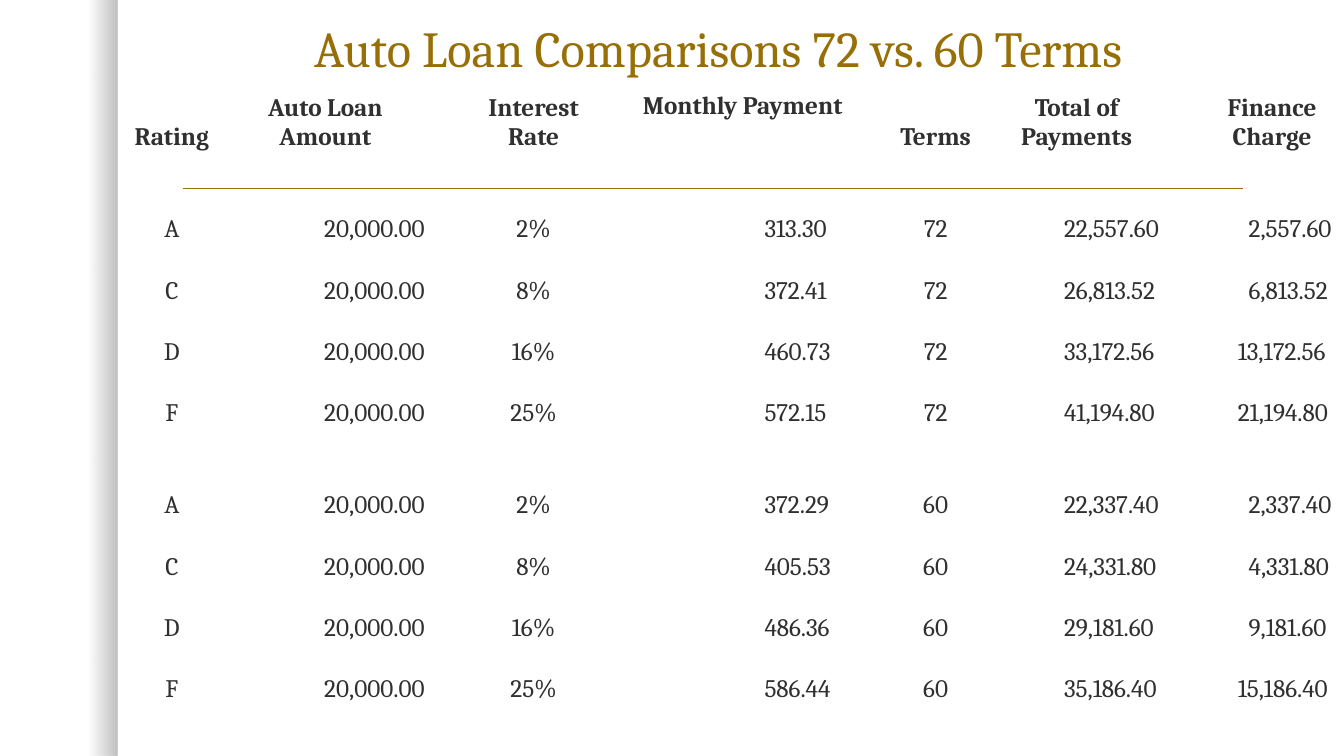
from lxml import etree
from pptx import Presentation
from pptx.dml.color import RGBColor
from pptx.enum.shapes import MSO_CONNECTOR, MSO_SHAPE
from pptx.enum.text import MSO_ANCHOR, MSO_AUTO_SIZE, PP_ALIGN
from pptx.oxml.ns import qn
from pptx.util import Pt

LEFT, CENTER, RIGHT = PP_ALIGN.LEFT, PP_ALIGN.CENTER, PP_ALIGN.RIGHT
TOP, BOTTOM = MSO_ANCHOR.TOP, MSO_ANCHOR.BOTTOM
RECTANGLE, STRAIGHT = MSO_SHAPE.RECTANGLE, MSO_CONNECTOR.STRAIGHT
NO_AUTOSIZE = MSO_AUTO_SIZE.NONE

# Content
TITLE = "Auto Loan Comparisons 72 vs. 60 Terms"
HEADERS = ("Rating", "Auto Loan Amount", "Interest Rate", "Monthly Payment",
           "Terms", "Total of Payments", "Finance Charge")
LOANS = {
    "72": [
        ("A", "20,000.00", "2%", "313.30", "72", "22,557.60", "2,557.60"),
        ("C", "20,000.00", "8%", "372.41", "72", "26,813.52", "6,813.52"),
        ("D", "20,000.00", "16%", "460.73", "72", "33,172.56", "13,172.56"),
        ("F", "20,000.00", "25%", "572.15", "72", "41,194.80", "21,194.80"),
    ],
    "60": [
        ("A", "20,000.00", "2%", "372.29", "60", "22,337.40", "2,337.40"),
        ("C", "20,000.00", "8%", "405.53", "60", "24,331.80", "4,331.80"),
        ("D", "20,000.00", "16%", "486.36", "60", "29,181.60", "9,181.60"),
        ("F", "20,000.00", "25%", "586.44", "60", "35,186.40", "15,186.40"),
    ],
}

# Style and measures, in points
FONT = "Cambria"
COLORS = {"gold": "986F07", "ink": "303030", "shade": "000000"}
COLUMN_WIDTHS = (65.5, 154, 27.4, 88.6, 30.2, 149.8, 30.2, 65.5, 136, 19.4, 104.4)
TEXT_COLUMNS = (0, 1, 3, 5, 7, 8, 10)
ROW_HEIGHT, GAP_HEIGHT, END_HEIGHT = 43.8, 22, 15
MARGIN = 0.7
# Alignment, left margin and right margin of the figures in each text column
FIGURES = ((CENTER, MARGIN, MARGIN), (RIGHT, MARGIN, 6.2), (CENTER, MARGIN, MARGIN),
           (LEFT, 90.5, MARGIN), (CENTER, MARGIN, MARGIN), (LEFT, 59, MARGIN),
           (LEFT, 35.5, MARGIN))
LONG_FIGURE_MARGIN = 27.7
HEADER_SIDE_MARGIN = 8


def color(name):
    return RGBColor.from_string(COLORS[name])


def add_run(para, text, size, color_name, bold=False):
    span = para.add_run()
    span.text = text
    span.font.name = FONT
    span.font.size = Pt(size)
    span.font.bold = bold
    span.font.color.rgb = color(color_name)


def write_cell(cell, text, align, left, right, bold=False):
    cell.margin_left, cell.margin_right = Pt(left), Pt(right)
    para = cell.text_frame.paragraphs[0]
    para.alignment = align
    add_run(para, text, 18, "ink", bold)


def add_shaded_edge(slide):
    edge = slide.shapes.add_shape(RECTANGLE, 0, 0, Pt(83.8), Pt(540))
    edge.shadow.inherit = False
    edge.line.fill.background()
    edge.fill.gradient()
    edge.fill.gradient_angle = 0
    for stop, position in zip(edge.fill.gradient_stops, (0.75, 1)):
        stop.position = position
        stop.color.rgb = color("shade")
    stop_colors = edge.fill._xPr.iter(qn("a:srgbClr"))
    for stop_color, opacity in zip(stop_colors, (0, 25000)):
        etree.SubElement(stop_color, qn("a:alpha")).set("val", str(opacity))


def add_rule(slide):
    rule = slide.shapes.add_connector(STRAIGHT, Pt(130.5), Pt(134.5), Pt(888), Pt(134.5))
    rule.line.color.rgb = color("gold")
    rule.line.width = Pt(1)
    etree.SubElement(rule._element.spPr, qn("a:effectLst"))


def write_title(slide):
    title = slide.shapes.title
    title.left, title.top, title.width, title.height = Pt(126), Pt(12), Pt(774), Pt(48)
    frame = title.text_frame
    frame.word_wrap = True
    frame.auto_size = NO_AUTOSIZE
    frame.vertical_anchor = BOTTOM
    para = frame.paragraphs[0]
    para.alignment = CENTER
    para.line_spacing = 0.9
    add_run(para, TITLE, 36, "gold")


def add_loan_table(slide):
    # None marks an empty spacer row
    rows = [HEADERS, None, *LOANS["72"], None, *LOANS["60"], None]
    heights = [ROW_HEIGHT if row else GAP_HEIGHT for row in rows]
    heights[-1] = END_HEIGHT
    frame = slide.shapes.add_table(len(rows), len(COLUMN_WIDTHS), Pt(90), Pt(64.8),
                                   Pt(sum(COLUMN_WIDTHS)), Pt(sum(heights)))
    table = frame.table
    table.first_row = table.horz_banding = False
    style = table._tbl.tblPr.find(qn("a:tableStyleId"))
    style.text = "{2D5ABB26-0587-4C30-8999-92F81FD0307C}"  # no style, no grid
    for column, width in zip(table.columns, COLUMN_WIDTHS):
        column.width = Pt(width)
    for row, height in zip(table.rows, heights):
        row.height = Pt(height)

    # Plain cells, with small empty lines so that spacer rows stay low
    for cell in table.iter_cells():
        cell.fill.background()
        cell.vertical_anchor = BOTTOM
        cell.margin_left = cell.margin_right = cell.margin_top = Pt(MARGIN)
        cell.margin_bottom = 0
        end = etree.SubElement(cell.text_frame.paragraphs[0]._p, qn("a:endParaRPr"))
        end.set("sz", "800")

    # Headers
    for index, (column, text) in enumerate(zip(TEXT_COLUMNS, HEADERS)):
        side = HEADER_SIDE_MARGIN if index == 1 else MARGIN
        write_cell(table.cell(0, column), text, CENTER, side, side, bold=True)
    table.cell(0, TEXT_COLUMNS[3]).vertical_anchor = TOP

    # Figures
    for row_index, row in enumerate(rows[1:], 1):
        for column, text, (align, left, right) in zip(TEXT_COLUMNS, row or (), FIGURES):
            if column == TEXT_COLUMNS[-1] and len(text) > 8:
                left = LONG_FIGURE_MARGIN
            write_cell(table.cell(row_index, column), text, align, left, right)


def main():
    deck = Presentation()
    deck.slide_width, deck.slide_height = Pt(960), Pt(540)
    page = deck.slides.add_slide(deck.slide_layouts[5])
    add_shaded_edge(page)
    add_rule(page)
    write_title(page)
    add_loan_table(page)
    deck.save("out.pptx")


if __name__ == "__main__":
    main()
